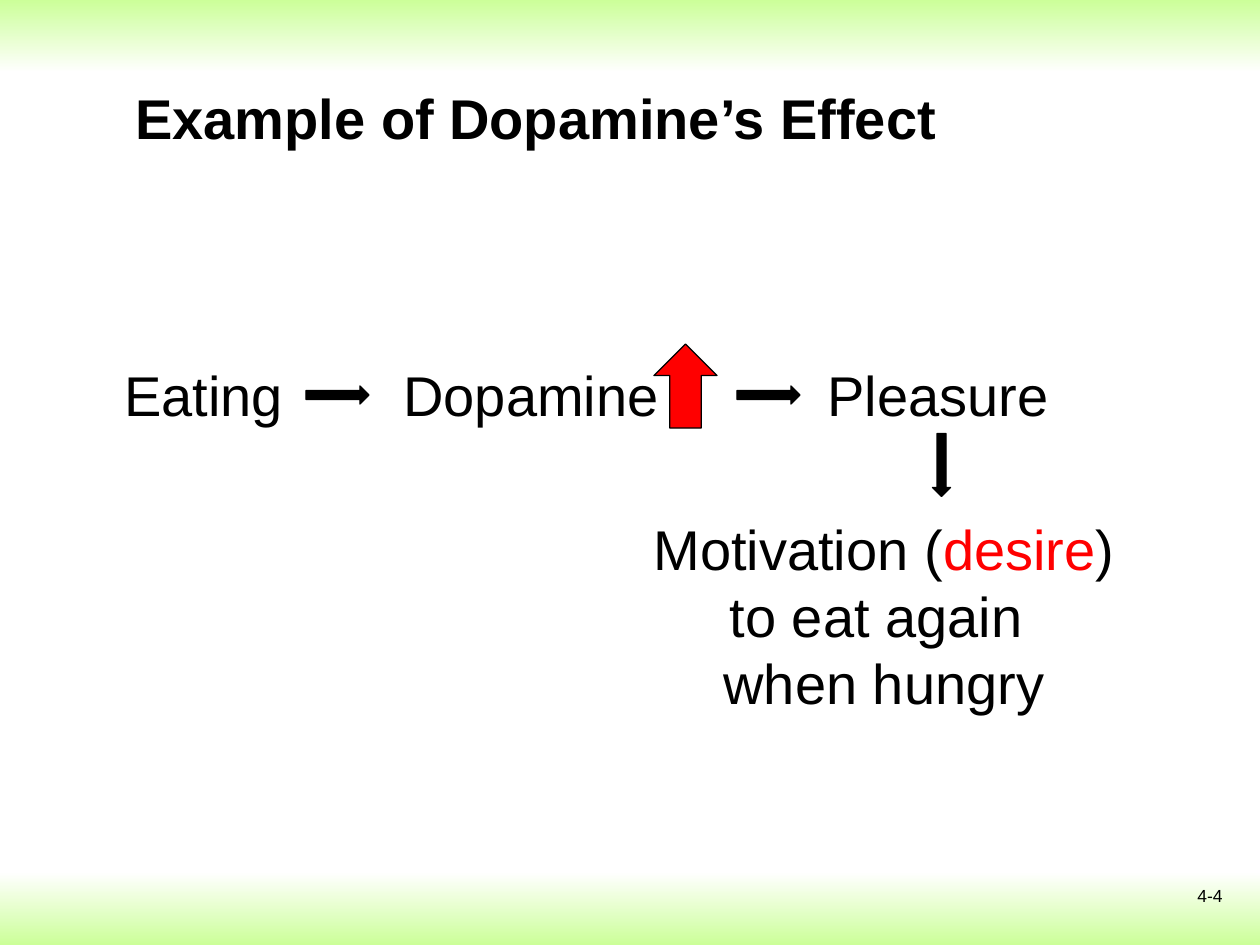
from pptx import Presentation
from pptx.dml.color import RGBColor
from pptx.enum.shapes import MSO_SHAPE
from pptx.enum.text import MSO_ANCHOR, PP_ALIGN
from pptx.util import Emu, Pt

RECTANGLE = MSO_SHAPE.RECTANGLE
RIGHT_ARROW, UP_ARROW = MSO_SHAPE.RIGHT_ARROW, MSO_SHAPE.UP_ARROW
TOP, MIDDLE = MSO_ANCHOR.TOP, MSO_ANCHOR.MIDDLE
LEFT, CENTER, RIGHT = PP_ALIGN.LEFT, PP_ALIGN.CENTER, PP_ALIGN.RIGHT

BLACK = RGBColor(0x00, 0x00, 0x00)
RED = RGBColor(0xFF, 0x00, 0x00)
WHITE = RGBColor(0xFF, 0xFF, 0xFF)
LIME = RGBColor(0xCC, 0xFF, 0x99)

FONT = "Arial"
BODY_SIZE, NUMBER_SIZE = 32, 10
LINE_RATIO = 1.2
EMU_PER_PX = 914400 / 126
SLIDE_W, SLIDE_H, BAND_H = 1260, 945, 73

# Top edge, colour at the top, colour at the bottom
BANDS = [
    (SLIDE_H - BAND_H, WHITE, LIME),
    (0, LIME, WHITE),
]

TITLE = "Example of Dopamine’s Effect"
PAGE_NUMBER = "4-4"

STEP_TOP, STEP_H = 354, 81
STEPS = [("Eating", 112, 185), ("Dopamine", 391, 282), ("Pleasure", 815, 248)]

OUTCOME = [
    [("Motivation (", BLACK), ("desire", RED), (") to eat again ", BLACK)],
    [("when hungry", BLACK)],
]

# Preset, box, rotation, fill
ARROWS = [
    (RIGHT_ARROW, (306, 386, 63, 18), 0, BLACK),
    (RIGHT_ARROW, (737, 386, 63, 18), 0, BLACK),
    (RIGHT_ARROW, (910, 456, 63, 18), 90, BLACK),
    (UP_ARROW, (654, 344, 63, 84), 0, RED),
]


def px(*lengths):
    return [Emu(round(length * EMU_PER_PX)) for length in lengths]


def add_band(slide, top, upper, lower):
    band = slide.shapes.add_shape(RECTANGLE, *px(0, top, SLIDE_W, BAND_H))
    band.shadow.inherit = False
    band.line.fill.background()
    band.fill.gradient()
    band.fill.gradient_angle = 270
    for stop, color, position in zip(band.fill.gradient_stops, (upper, lower), (0, 1)):
        stop.color.rgb = color
        stop.position = position


def add_text(slide, box, paragraphs, size=BODY_SIZE, align=LEFT, anchor=TOP,
             bold=False, wrap=True):
    """Add a text box; each paragraph is a list of (text, color) runs."""
    frame = slide.shapes.add_textbox(*px(*box)).text_frame
    frame.word_wrap = wrap
    frame.vertical_anchor = anchor
    for index, runs in enumerate(paragraphs):
        paragraph = frame.add_paragraph() if index else frame.paragraphs[0]
        paragraph.alignment = align
        paragraph.line_spacing = Pt(size * LINE_RATIO)
        for text, color in runs:
            run = paragraph.add_run()
            run.text = text
            run.font.name = FONT
            run.font.size = Pt(size)
            run.font.bold = bold
            run.font.color.rgb = color


def add_arrow(slide, preset, box, rotation, color):
    arrow = slide.shapes.add_shape(preset, *px(*box))
    arrow.shadow.inherit = False
    arrow.rotation = rotation
    arrow.fill.solid()
    arrow.fill.fore_color.rgb = color
    arrow.line.color.rgb = BLACK
    arrow.line.width = Pt(0.75)


def main():
    deck = Presentation()
    deck.slide_width, deck.slide_height = px(SLIDE_W, SLIDE_H)
    slide = deck.slides.add_slide(deck.slide_layouts[6])

    for band in BANDS:
        add_band(slide, *band)
    add_text(slide, (941, 879, 294, 66), [[(PAGE_NUMBER, BLACK)]],
             size=NUMBER_SIZE, align=RIGHT)
    add_text(slide, (123, 38, 1061, 158), [[(TITLE, BLACK)]],
             anchor=MIDDLE, bold=True)
    for step, left, width in STEPS:
        add_text(slide, (left, STEP_TOP, width, STEP_H), [[(step, BLACK)]], wrap=False)
    for arrow in ARROWS:
        add_arrow(slide, *arrow)
    add_text(slide, (630, 508, 508, 217), OUTCOME, align=CENTER)

    deck.save("out.pptx")


if __name__ == "__main__":
    main()
